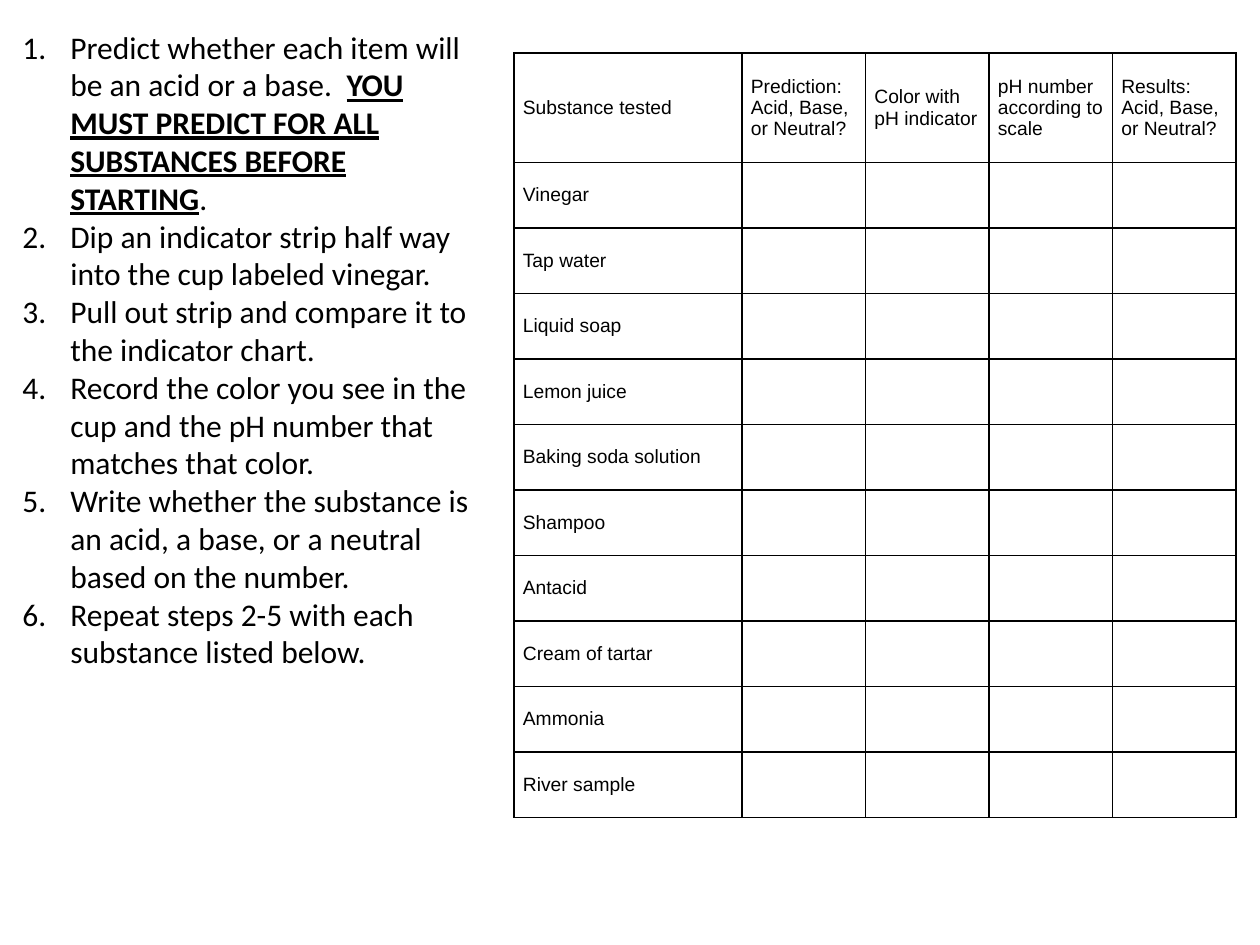
from lxml.etree import SubElement
from pptx import Presentation
from pptx.dml.color import RGBColor
from pptx.enum.text import MSO_ANCHOR, MSO_AUTO_SIZE
from pptx.oxml.ns import qn
from pptx.util import Inches, Pt

# Content: each step is a list of (text, emphasised) runs
STEPS = [
    [("Predict whether each item will be an acid or a base.  ", False),
     ("YOU MUST PREDICT FOR ALL SUBSTANCES BEFORE STARTING", True),
     (".", False)],
    [("Dip an indicator strip half way into the cup labeled vinegar.", False)],
    [("Pull out strip and compare it to the indicator chart.", False)],
    [("Record the color you see in the cup and the pH number that matches that color.", False)],
    [("Write whether the substance is an acid, a base, or a neutral based on the number.", False)],
    [("Repeat steps 2-5 with each substance listed below.", False)],
]
HEADINGS = ["Substance tested", "Prediction:  Acid, Base, or Neutral?",
            "Color with pH indicator", "pH number according to scale",
            "Results: Acid, Base, or Neutral?"]
SUBSTANCES = ["Vinegar", "Tap water", "Liquid soap", "Lemon juice",
              "Baking soda solution", "Shampoo", "Antacid", "Cream of tartar",
              "Ammonia", "River sample"]

# Format
COLORS = {"ink": "000000"}
INK = RGBColor.from_string(COLORS["ink"])
STEP_FONT = {"name": "Calibri", "size": Pt(18)}
TABLE_FONT = {"name": "Arial", "size": Pt(11)}
CELL_FORMAT = {"margin_left": Inches(0.07), "margin_right": Inches(0.07),
               "margin_top": 0, "margin_bottom": 0,
               "vertical_anchor": MSO_ANCHOR.MIDDLE}
STEP_INDENT = Inches(0.38)
COLUMN_WIDTHS = [1.81] + [0.98] * 4
ROW_HEIGHTS = [0.87] + [0.52] * len(SUBSTANCES)


def set_attributes(target, values):
    for name, value in values.items():
        setattr(target, name, value)


def add_run(paragraph, text, font_format):
    run = paragraph.add_run()
    run.text = text
    set_attributes(run.font, font_format)
    run.font.color.rgb = INK


def number_paragraph(paragraph):
    properties = paragraph._p.get_or_add_pPr()
    properties.set("marL", str(STEP_INDENT))
    properties.set("indent", str(-STEP_INDENT))
    SubElement(properties, qn("a:buFont"), typeface="+mj-lt")
    SubElement(properties, qn("a:buAutoNum"), type="arabicPeriod")


def add_borders(cell):
    properties = cell._tc.get_or_add_tcPr()
    for side in ("lnL", "lnR", "lnT", "lnB"):
        line = SubElement(properties, qn(f"a:{side}"), w=str(Pt(1)))
        fill = SubElement(line, qn("a:solidFill"))
        SubElement(fill, qn("a:srgbClr"), val=COLORS["ink"])


def add_steps(slide):
    box = slide.shapes.add_textbox(Inches(0.08), Inches(0.17), Inches(3.75), Inches(5.55))
    frame = box.text_frame
    frame.word_wrap = True
    frame.auto_size = MSO_AUTO_SIZE.SHAPE_TO_FIT_TEXT
    for index, step in enumerate(STEPS):
        paragraph = frame.add_paragraph() if index else frame.paragraphs[0]
        number_paragraph(paragraph)
        for text, emphasised in step:
            add_run(paragraph, text,
                    {**STEP_FONT, "bold": emphasised, "underline": emphasised})


def add_results_table(slide):
    rows = [HEADINGS] + [[name] + [""] * (len(HEADINGS) - 1) for name in SUBSTANCES]
    table = slide.shapes.add_table(
        len(rows), len(HEADINGS), Inches(4.08), Inches(0.42),
        Inches(sum(COLUMN_WIDTHS)), Inches(sum(ROW_HEIGHTS))).table
    set_attributes(table, {"first_row": False, "horz_banding": False})
    for column, width in zip(table.columns, COLUMN_WIDTHS):
        column.width = Inches(width)
    for row, height, texts in zip(table.rows, ROW_HEIGHTS, rows):
        row.height = Inches(height)
        for cell, text in zip(row.cells, texts):
            set_attributes(cell, CELL_FORMAT)
            add_borders(cell)
            cell.fill.background()
            paragraph = cell.text_frame.paragraphs[0]
            if text:
                add_run(paragraph, text, TABLE_FONT)


def main():
    presentation = Presentation()
    presentation.slide_width = Inches(10)
    presentation.slide_height = Inches(7.5)
    slide = presentation.slides.add_slide(presentation.slide_layouts[6])
    add_steps(slide)
    add_results_table(slide)
    presentation.save("out.pptx")


if __name__ == "__main__":
    main()
